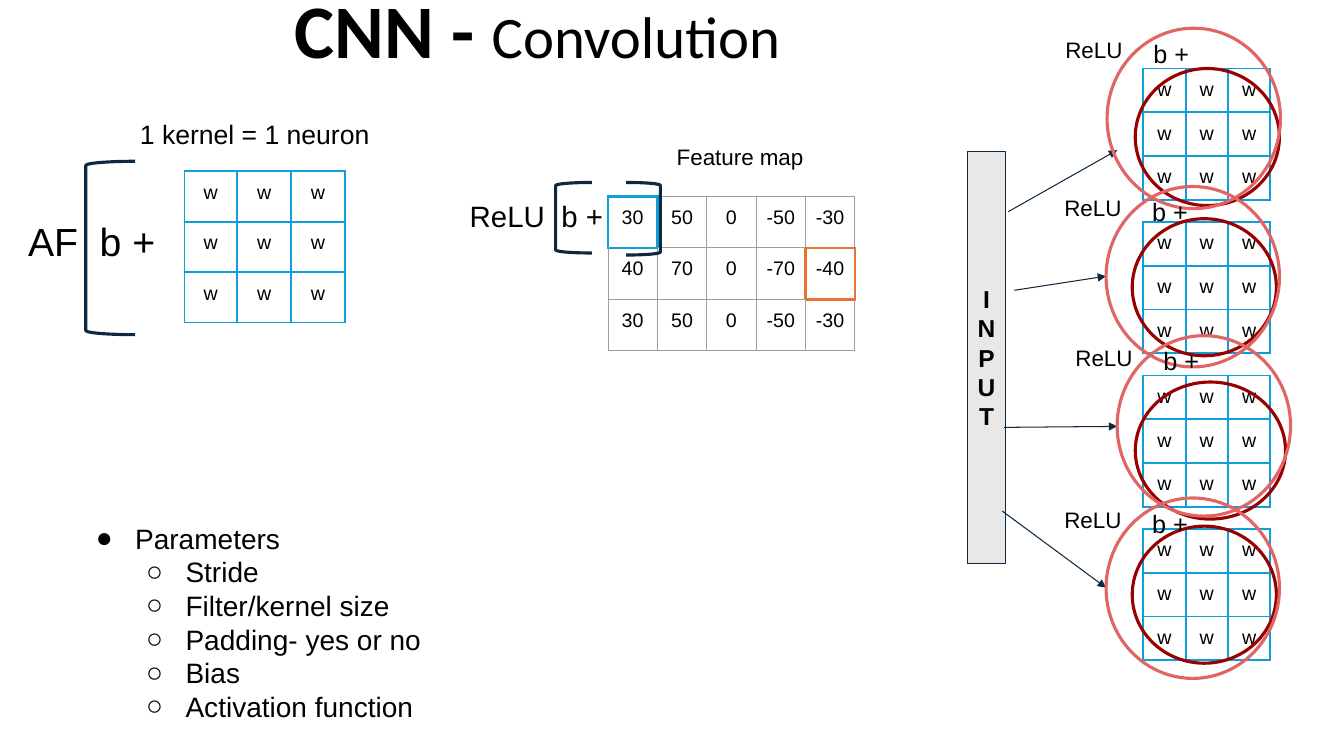
import dataclasses
import typing

import lxml.etree
import pptx
import pptx.dml.color
import pptx.enum.shapes
import pptx.enum.text
import pptx.oxml.ns
import pptx.util

SLIDE_WIDTH = pptx.util.Inches(13.33)
SLIDE_HEIGHT = pptx.util.Inches(7.5)
COLUMN = SLIDE_WIDTH / 133.3
ROW = SLIDE_HEIGHT / 75
BLACK, NAVY, BLUE, GREY, ORANGE = "000000", "0E2841", "0F9ED5", "9E9E9E", "E97132"
DARK_RED, ROSE, PALE = "990000", "E06666", "E8E8E8"
CENTER = pptx.enum.text.PP_ALIGN.CENTER
LEFT = pptx.enum.text.PP_ALIGN.LEFT
Shapes = pptx.enum.shapes.MSO_SHAPE
Point = tuple[float, float]


class Area(typing.NamedTuple):
    left: float
    top: float
    width: float
    height: float

    def emu(self) -> tuple[int, int, int, int]:
        return (round(self.left * COLUMN), round(self.top * ROW),
                round(self.width * COLUMN), round(self.height * ROW))


class Border(typing.NamedTuple):
    color: str
    points: float


@dataclasses.dataclass
class Caption:
    text: str
    area: Area
    size: float
    align: typing.Any = LEFT
    tab: float = 0


@dataclasses.dataclass
class Matrix:
    left: float
    top: float
    widths: list[float]
    row_height: float
    values: list[list[str]]
    border: Border
    highlights: dict[tuple[int, int], Border] = dataclasses.field(default_factory=dict)


@dataclasses.dataclass
class Neuron:
    activation: Point
    weights: Area
    arrow_start: Point
    arrow_end: Point


def rgb(color: str) -> pptx.dml.color.RGBColor:
    return pptx.dml.color.RGBColor.from_string(color)


def child(parent, tag: str, **attributes: str):
    return lxml.etree.SubElement(parent, pptx.oxml.ns.qn(tag), attributes)


def style(run, size: float, bold: bool = False, font: str = "Arial") -> None:
    run.font.name, run.font.size, run.font.bold = font, pptx.util.Pt(size), bold
    run.font.color.rgb = rgb(BLACK)


def place(shape, area: Area) -> None:
    shape.left, shape.top, shape.width, shape.height = area.emu()


def set_margins(frame, sides: float, ends: float) -> None:
    frame.margin_left = frame.margin_right = round(sides * COLUMN)
    frame.margin_top = frame.margin_bottom = round(ends * ROW)


def draw_caption(slide, caption: Caption) -> None:
    frame = slide.shapes.add_textbox(*caption.area.emu()).text_frame
    frame.word_wrap = True
    set_margins(frame, 1, 1)
    frame.text = caption.text
    paragraph = frame.paragraphs[0]
    paragraph.alignment = caption.align
    if caption.tab:
        stops = child(paragraph._p.get_or_add_pPr(), "a:tabLst")
        child(stops, "a:tab", pos=str(round(caption.tab * COLUMN)), algn="l")
    style(paragraph.runs[0], caption.size)


def draw_outline(slide, kind, area: Area, color: str, points: float = 2.25,
                 fill: str = "", rotation: float = 0):
    shape = slide.shapes.add_shape(kind, *area.emu())
    shape.shadow.inherit = False
    shape.rotation = rotation
    shape.line.color.rgb = rgb(color)
    shape.line.width = pptx.util.Pt(points)
    if fill:
        shape.fill.solid()
        shape.fill.fore_color.rgb = rgb(fill)
    else:
        shape.fill.background()
    return shape


def draw_arrow(slide, start: Point, end: Point) -> None:
    (x1, y1), (x2, y2) = start, end
    arrow = slide.shapes.add_connector(
        pptx.enum.shapes.MSO_CONNECTOR.STRAIGHT, round(x1 * COLUMN), round(y1 * ROW),
        round(x2 * COLUMN), round(y2 * ROW))
    arrow.line.color.rgb = rgb(NAVY)
    arrow.line.width = pptx.util.Pt(0.75)
    child(arrow.line._get_or_add_ln(), "a:tailEnd", type="triangle")
    child(arrow._element.spPr, "a:effectLst")


def draw_matrix(slide, matrix: Matrix) -> None:
    rows, columns = len(matrix.values), len(matrix.widths)
    area = Area(matrix.left, matrix.top, sum(matrix.widths), rows * matrix.row_height)
    table = slide.shapes.add_table(rows, columns, *area.emu()).table
    table.first_row = table.horz_banding = False
    for column, width in zip(table.columns, matrix.widths):
        column.width = round(width * COLUMN)
    for r, values in enumerate(matrix.values):
        table.rows[r].height = round(matrix.row_height * ROW)
        for c, value in enumerate(values):
            cell = table.cell(r, c)
            set_margins(cell, 1, 1)
            cell.text = value
            paragraph = cell.text_frame.paragraphs[0]
            paragraph.alignment = CENTER
            style(paragraph.runs[0], 14)
            neighbours = {"L": (r, c - 1), "R": (r, c + 1), "T": (r - 1, c), "B": (r + 1, c)}
            for side, neighbour in neighbours.items():
                shared = matrix.highlights.get(neighbour, matrix.border)
                edge = matrix.highlights.get((r, c), shared)
                line = child(cell._tc.get_or_add_tcPr(), f"a:ln{side}",
                             w=str(pptx.util.Pt(edge.points)))
                child(child(line, "a:solidFill"), "a:srgbClr", val=edge.color)
            cell.fill.background()


def draw_title(slide) -> None:
    title = slide.shapes.title
    place(title, Area(0, 0, 106.6, 7.9))
    frame = title.text_frame
    frame.auto_size = pptx.enum.text.MSO_AUTO_SIZE.NONE
    frame.vertical_anchor = pptx.enum.text.MSO_ANCHOR.BOTTOM
    set_margins(frame, 1, 0.5)
    paragraph = frame.paragraphs[0]
    paragraph.text = "CNN - "
    paragraph.add_run().text = "Convolution"
    paragraph.alignment = CENTER
    paragraph.line_spacing = 0.9
    style(paragraph.runs[0], 54, True, "Calibri")
    style(paragraph.runs[1], 42, False, "Calibri")


def draw_parameters(slide) -> None:
    body = slide.placeholders[1]
    place(body, Area(7.4, 50.7, 45.3, 22.4))
    frame = body.text_frame
    frame.auto_size = pptx.enum.text.MSO_AUTO_SIZE.NONE
    set_margins(frame, 1, 1)
    frame.text = ("Parameters\nStride\nFilter/kernel size\nPadding- yes or no\n"
                  "Bias\nActivation function")
    for index, paragraph in enumerate(frame.paragraphs):
        paragraph.level = min(index, 1)
        paragraph.space_before = pptx.util.Pt(0)
        properties = paragraph._p.get_or_add_pPr()
        properties.set("marL", str(round(5 * (paragraph.level + 1) * COLUMN)))
        properties.set("indent", str(round(-3.9 * COLUMN)))
        child(child(properties, "a:buClr"), "a:srgbClr", val=BLACK)
        child(properties, "a:buFont", typeface="Arial")
        child(properties, "a:buChar", char="●○"[paragraph.level])
        style(paragraph.runs[0], 20)


def draw_input(slide) -> None:
    column = draw_outline(slide, Shapes.RECTANGLE, Area(96, 15, 3.7, 40.9), NAVY, 0.69, PALE)
    frame = column.text_frame
    frame.word_wrap = True
    set_margins(frame, 0.9, 0.9)
    frame.text = "INPUT"
    frame.paragraphs[0].alignment = CENTER
    style(frame.paragraphs[0].runs[0], 17.5, True)


WEIGHTS = [["w"] * 3] * 3
KERNEL_BORDER = Border(BLUE, 1.5)
FEATURE_MAP = Matrix(
    60.3, 19.5, [4.9] * 5, 5.1,
    [["30", "50", "0", "-50", "-30"], ["40", "70", "0", "-70", "-40"],
     ["30", "50", "0", "-50", "-30"]],
    Border(GREY, 0.75), {(0, 0): Border(BLUE, 2.25), (1, 4): Border(ORANGE, 2.25)})
KERNEL = Matrix(18.3, 17, [5.2, 5.4, 5.3], 5, WEIGHTS, KERNEL_BORDER)
CAPTIONS = [
    Caption("Feature map", Area(65.5, 13.2, 15.8, 4.7), 16, CENTER),
    Caption("AF\tb +", Area(1.8, 20.6, 15.9, 7.9), 28, tab=7.1),
    Caption("1 kernel = 1 neuron", Area(12.9, 10.7, 26.7, 5.2), 19),
    Caption("ReLU\tb +", Area(45.6, 18.7, 15.9, 7.9), 21, tab=9.1),
]
BRACKETS = [(Area(62.1, 18.1, 3.4, 7.2), 0), (Area(8.5, 16, 4.9, 17.2), 180),
            (Area(55.1, 18.1, 3.6, 7), 180)]
NEURONS = [
    Neuron((109.8, 2.8), Area(112.6, 6.8, 14.3, 13.6), (100, 21), (110.8, 14.9)),
    Neuron((109.7, 18.5), Area(112.3, 21.7, 14.3, 13.6), (100.6, 28.8), (109.7, 27.4)),
    Neuron((110.8, 33.3), Area(112.6, 37.9, 14.9, 13.6), (99.6, 42.4), (110.8, 42.3)),
    Neuron((109.7, 49.4), Area(112.3, 52.2, 14.3, 13.6), (99.4, 50.7), (109.7, 58.3)),
]


def main() -> None:
    deck = pptx.Presentation()
    deck.slide_width, deck.slide_height = SLIDE_WIDTH, SLIDE_HEIGHT
    slide = deck.slides.add_slide(deck.slide_layouts[1])
    draw_title(slide)
    draw_parameters(slide)
    draw_matrix(slide, FEATURE_MAP)
    draw_matrix(slide, KERNEL)
    for caption in CAPTIONS:
        draw_caption(slide, caption)
    for area, rotation in BRACKETS:
        draw_outline(slide, Shapes.RIGHT_BRACKET, area, NAVY, rotation=rotation)
    for index in range(len(NEURONS)):
        draw_matrix(slide, Matrix(113.4, 6.8 + 15.23 * index, [4.2] * 3, 3.4,
                                  WEIGHTS, KERNEL_BORDER))
    for neuron in NEURONS:
        draw_outline(slide, Shapes.OVAL, neuron.weights, DARK_RED)
    draw_input(slide)
    for neuron in NEURONS:
        left, top = neuron.activation
        draw_arrow(slide, neuron.arrow_start, neuron.arrow_end)
        draw_caption(slide, Caption("b +", Area(left + 3.6, top, 8.4, 5), 18))
        draw_outline(slide, Shapes.OVAL, Area(left, top, 17.2, 17.9), ROSE)
        draw_caption(slide, Caption("ReLU", Area(left - 9.2, top - 0.2, 15.8, 4.7), 16, CENTER))
    deck.save("out.pptx")


if __name__ == "__main__":
    main()
